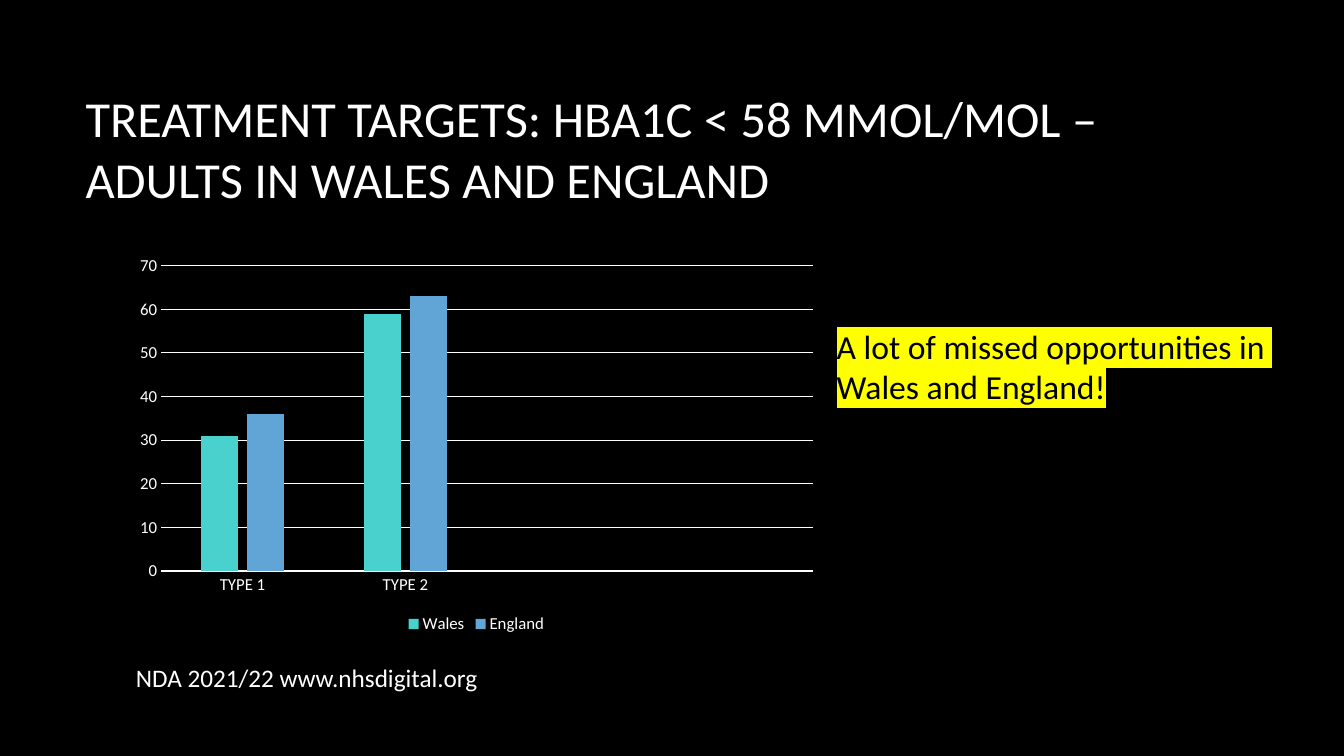
from dataclasses import dataclass

from lxml import etree
from pptx import Presentation
from pptx.chart.data import CategoryChartData
from pptx.dml.color import RGBColor
from pptx.enum.chart import XL_CHART_TYPE, XL_LEGEND_POSITION, XL_TICK_MARK
from pptx.enum.text import MSO_ANCHOR
from pptx.oxml.ns import qn
from pptx.util import Inches, Pt

COLUMN_CLUSTERED = XL_CHART_TYPE.COLUMN_CLUSTERED
LEGEND_BOTTOM = XL_LEGEND_POSITION.BOTTOM
NO_TICK = XL_TICK_MARK.NONE
MIDDLE = MSO_ANCHOR.MIDDLE
TOP = MSO_ANCHOR.TOP


@dataclass(frozen=True)
class Theme:
    font: str = "Calibri"
    background: str = "000000"
    light: str = "FFFFFF"
    dark: str = "000000"
    highlight: str = "FFFF00"
    wales: str = "49D1CD"
    england: str = "61A5D6"
    title_size: int = 36
    message_size: int = 24
    source_size: int = 18
    chart_size: int = 12
    line_width: float = 0.75


theme = Theme()


def style_font(font, size, color):
    font.name = theme.font
    font.size = Pt(size)
    font.color.rgb = RGBColor.from_string(color)


def add_text(slide, box, lines, size, color, anchor=TOP, wrap=True):
    shape = slide.shapes.add_textbox(*[Inches(length) for length in box])
    frame = shape.text_frame
    frame.word_wrap = wrap
    frame.vertical_anchor = anchor
    frame.text = "\n".join(lines)
    for paragraph in frame.paragraphs:
        style_font(paragraph.font, size, color)
    return frame


presentation = Presentation()
presentation.slide_width = Inches(13.33)
presentation.slide_height = Inches(7.5)
slide = presentation.slides.add_slide(presentation.slide_layouts[6])
slide.background.fill.solid()
slide.background.fill.fore_color.rgb = RGBColor.from_string(theme.background)

add_text(
    slide, (0.75, 0.67, 11.08, 1.59),
    ["TREATMENT TARGETS: HBA1C < 58 MMOL/MOL – ADULTS IN WALES AND ENGLAND"],
    theme.title_size, theme.light, anchor=MIDDLE,
)

chart_data = CategoryChartData()
chart_data.categories = ["TYPE 1", "TYPE 2", "", ""]
chart_data.add_series("Wales", [31, 59, None, None])
chart_data.add_series("England", [36, 63, None, None])
chart = slide.shapes.add_chart(
    COLUMN_CLUSTERED, Inches(1.25), Inches(2.46), Inches(6.95), Inches(3.87), chart_data
).chart
style_font(chart.font, theme.chart_size, theme.light)
chart.has_title = False
chart.has_legend = True
chart.legend.position = LEGEND_BOTTOM
chart.legend.include_in_layout = False
style_font(chart.legend.font, theme.chart_size, theme.light)

plot = chart.plots[0]
plot.gap_width = 219
plot.overlap = -27
plot.vary_by_categories = False
for series, color in zip(plot.series, (theme.wales, theme.england)):
    series.format.fill.solid()
    series.format.fill.fore_color.rgb = RGBColor.from_string(color)

category_axis = chart.category_axis
value_axis = chart.value_axis
for axis in (category_axis, value_axis):
    axis.major_tick_mark = NO_TICK
    axis.minor_tick_mark = NO_TICK
    style_font(axis.tick_labels.font, theme.chart_size, theme.light)
value_axis.minimum_scale = 0
value_axis.maximum_scale = 70
value_axis.major_unit = 10
value_axis.has_major_gridlines = True
value_axis.format.line.fill.background()
for line in (category_axis.format.line, value_axis.major_gridlines.format.line):
    line.color.rgb = RGBColor.from_string(theme.light)
    line.width = Pt(theme.line_width)

add_text(
    slide, (1.25, 6.52, 3.63, 0.4), ["NDA 2021/22 www.nhsdigital.org"],
    theme.source_size, theme.light, wrap=False,
)

message = add_text(
    slide, (8.2, 3.18, 5.59, 0.91),
    ["A lot of missed opportunities in ", "Wales and England!"],
    theme.message_size, theme.dark,
)
for paragraph in message.paragraphs:
    for run in paragraph.runs:
        properties = run.font._element
        highlight = etree.SubElement(properties, qn("a:highlight"))
        etree.SubElement(highlight, qn("a:srgbClr"), val=theme.highlight)

presentation.save("out.pptx")
